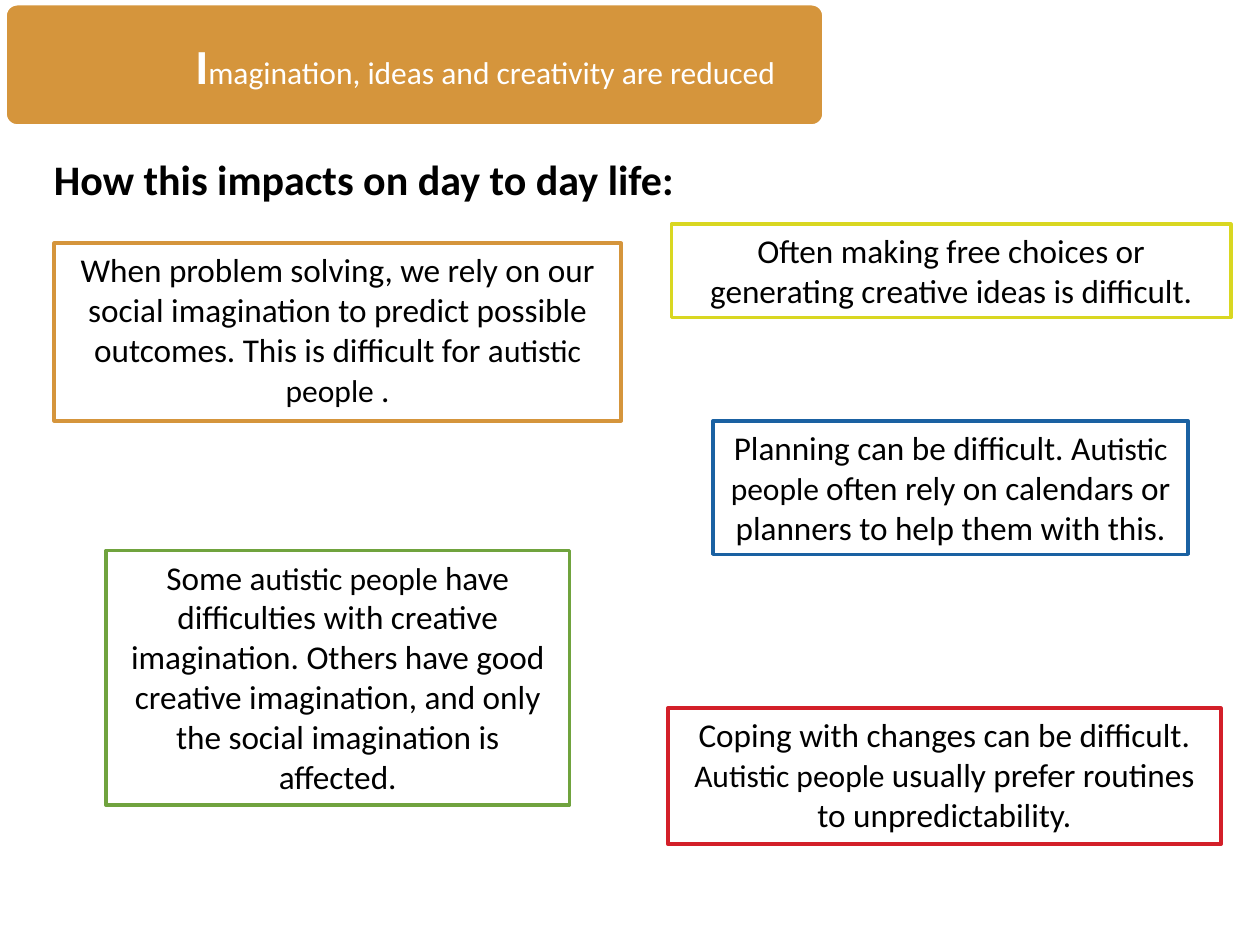
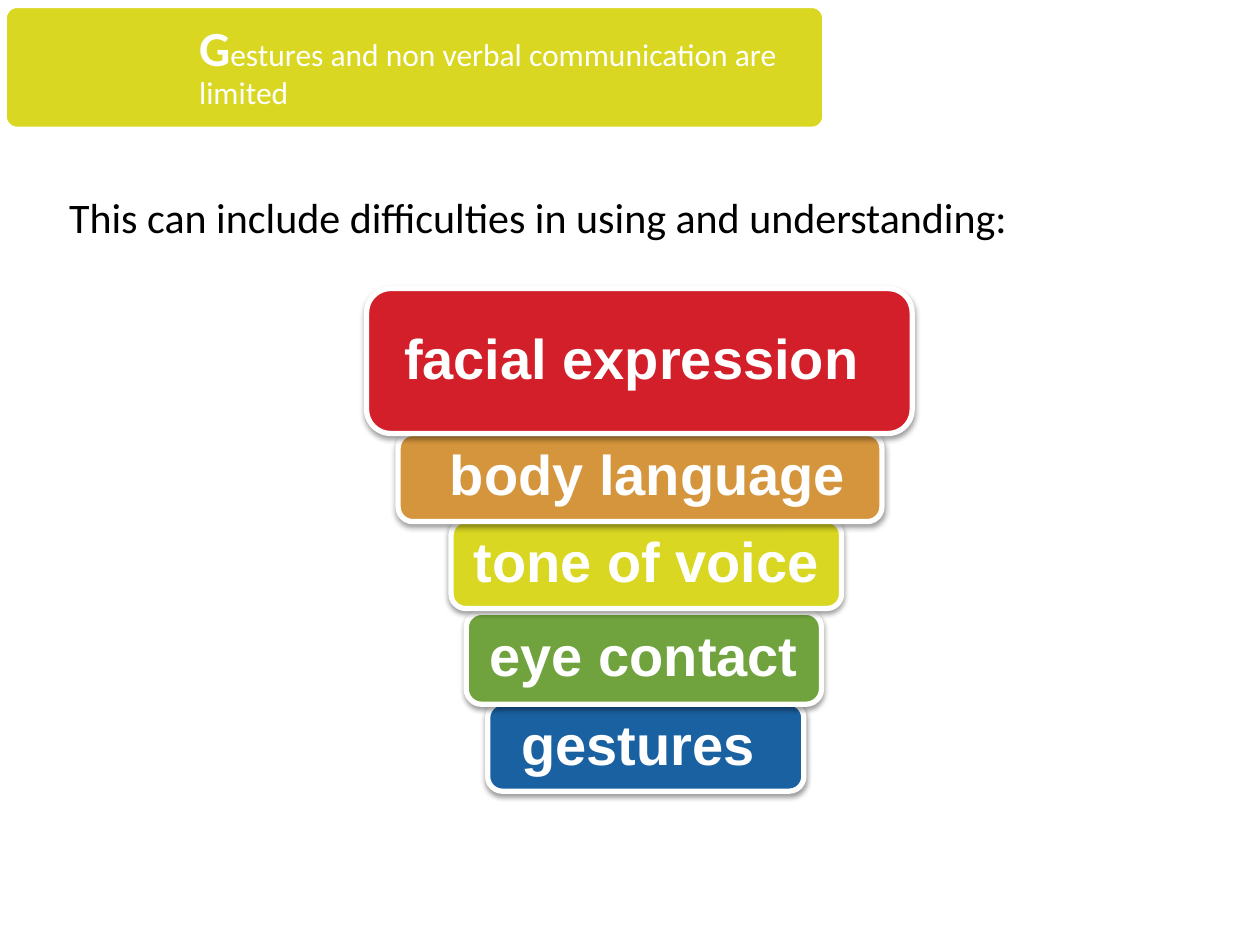
from lxml import etree
from pptx import Presentation
from pptx.dml.color import RGBColor
from pptx.enum import shapes, text
from pptx.util import Inches, Pt

RED = RGBColor(0xD3, 0x1F, 0x29)
ORANGE = RGBColor(0xD5, 0x95, 0x3C)
YELLOW = RGBColor(0xD9, 0xD7, 0x21)
GREEN = RGBColor(0x70, 0xA3, 0x3E)
BLUE = RGBColor(0x1A, 0x61, 0xA2)
WHITE = RGBColor(0xFF, 0xFF, 0xFF)
BLACK = RGBColor(0, 0, 0)
SHADOW = (
    '<a:effectLst xmlns:a="http://schemas.openxmlformats.org/drawingml/2006/main">'
    '<a:outerShdw blurRad="40000" dist="20000" dir="5400000" rotWithShape="0">'
    '<a:srgbClr val="000000"><a:alpha val="38000"/></a:srgbClr>'
    "</a:outerShdw></a:effectLst>"
)


def add_box(s, kind, at, fill, line, line_width):
    box = s.shapes.add_shape(kind, *[Inches(v) for v in at])
    box.shadow.inherit = False
    box.fill.solid()
    box.fill.fore_color.rgb = fill
    box.line.color.rgb = line
    box.line.width = Pt(line_width)
    return box


def add_slide(title, title_at, title_spacing, band_top, band_color,
              heading, heading_at, bold):
    """Add a slide with a coloured title band, large initial and heading."""
    s = prs.slides.add_slide(prs.slide_layouts[5])
    sp = s.shapes.title
    sp.left, sp.top, sp.width, sp.height = [Inches(v) for v in title_at]
    band = add_box(s, shapes.MSO_SHAPE.ROUNDED_RECTANGLE,
                   (0.04, band_top, 6.5, 0.97), band_color, WHITE, 2)
    band.adjustments[0] = 0.1
    sp.element.addprevious(band.element)

    tf = sp.text_frame
    tf.auto_size = text.MSO_AUTO_SIZE.NONE
    tf.word_wrap = True
    tf.vertical_anchor = text.MSO_ANCHOR.MIDDLE
    tf.margin_left = tf.margin_right = Inches(0.12)
    tf.margin_top = tf.margin_bottom = Inches(0.12)
    p = tf.paragraphs[0]
    p.alignment = text.PP_ALIGN.LEFT
    p.line_spacing = title_spacing
    p.font.name = "Calibri"
    p.font.color.rgb = WHITE
    for part, size in ((title[0], 28), (title[1:], 18)):
        r = p.add_run()
        r.text = part
        r.font.size = Pt(size)
        r.font.bold = size == 28

    tf = s.shapes.add_textbox(*[Inches(v) for v in heading_at]).text_frame
    tf.word_wrap = True
    p = tf.paragraphs[0]
    p.text = heading
    p.font.name = "Calibri"
    p.font.size = Pt(24)
    p.font.bold = bold
    p.font.color.rgb = BLACK
    return s


prs = Presentation()
prs.slide_width, prs.slide_height = Inches(10), Inches(7.5)

# Slide 1: impacts on daily life
s = add_slide("Imagination, ideas and creativity are reduced",
              (1.43, 0.03, 5.1, 0.97), 1.0, 0.03, ORANGE,
              "How this impacts on day to day life:", (0.33, 1.17, 5.17, 0.5), True)

# Each impact alternates 19 pt and 18 pt runs
impacts = [
    ((5.3, 5.62, 4.39, 1.08), RED,
     ["Coping with changes can be difficult. ", "Autistic people ",
      "usually prefer routines to unpredictability."]),
    ((0.84, 4.37, 3.68, 2.02), GREEN,
     ["Some a", "utistic people ",
      "have difficulties with creative imagination. Others have good creative "
      "imagination, and only the social imagination is affected."]),
    ((5.66, 3.34, 3.77, 1.06), BLUE,
     ["Planning can be difficult. A", "utistic people ",
      "often rely on calendars or planners to help them with this."]),
    ((5.33, 1.78, 4.44, 0.74), YELLOW,
     ["Often making free choices or generating creative ideas is difficult."]),
    ((0.43, 1.93, 4.5, 1.41), ORANGE,
     ["When problem solving, we rely on our social imagination to predict "
      "possible outcomes. This is difficult for a", "utistic people ", "."]),
]
for at, color, parts in impacts:
    tf = add_box(s, shapes.MSO_SHAPE.RECTANGLE, at, WHITE, color, 2).text_frame
    tf.word_wrap = True
    tf.vertical_anchor = text.MSO_ANCHOR.TOP
    p = tf.paragraphs[0]
    p.alignment = text.PP_ALIGN.CENTER
    p.font.name = "Calibri"
    p.font.color.rgb = BLACK
    for i, part in enumerate(parts):
        r = p.add_run()
        r.text = part
        r.font.size = Pt(18 if i % 2 else 19)

# Slide 2: funnel of non verbal signals, lowest bar at the back
s = add_slide("Gestures and non verbal communication are limited",
              (1.46, 0.08, 5.12, 0.91), 0.9, 0.05, YELLOW,
              "This can include difficulties in using and understanding:",
              (0.45, 1.47, 8.25, 0.5), False)

signals = [
    ("gestures ", (3.87, 5.58, 2.51, 0.7), BLUE),
    ("eye contact", (3.7, 4.86, 2.82, 0.73), GREEN),
    ("tone of voice", (3.58, 4.13, 3.1, 0.7), YELLOW),
    (" body language", (3.16, 3.44, 3.84, 0.7), ORANGE),
    ("facial expression ", (2.91, 2.29, 4.33, 1.15), RED),
]
for label, at, color in signals:
    bar = add_box(s, shapes.MSO_SHAPE.ROUNDED_RECTANGLE, at, color, WHITE, 3)
    bar.shadow.inherit = True
    bar.element.spPr.append(etree.fromstring(SHADOW))
    tf = bar.text_frame
    tf.word_wrap = True
    tf.vertical_anchor = text.MSO_ANCHOR.MIDDLE
    tf.margin_left = tf.margin_right = Inches(0.05)
    tf.margin_top = tf.margin_bottom = Inches(0.05)
    p = tf.paragraphs[0]
    p.text = label
    p.alignment = text.PP_ALIGN.CENTER
    p.line_spacing = 0.9
    p.font.name = "Arial"
    p.font.size = Pt(32)
    p.font.bold = True
    p.font.color.rgb = WHITE

prs.save("out.pptx")
